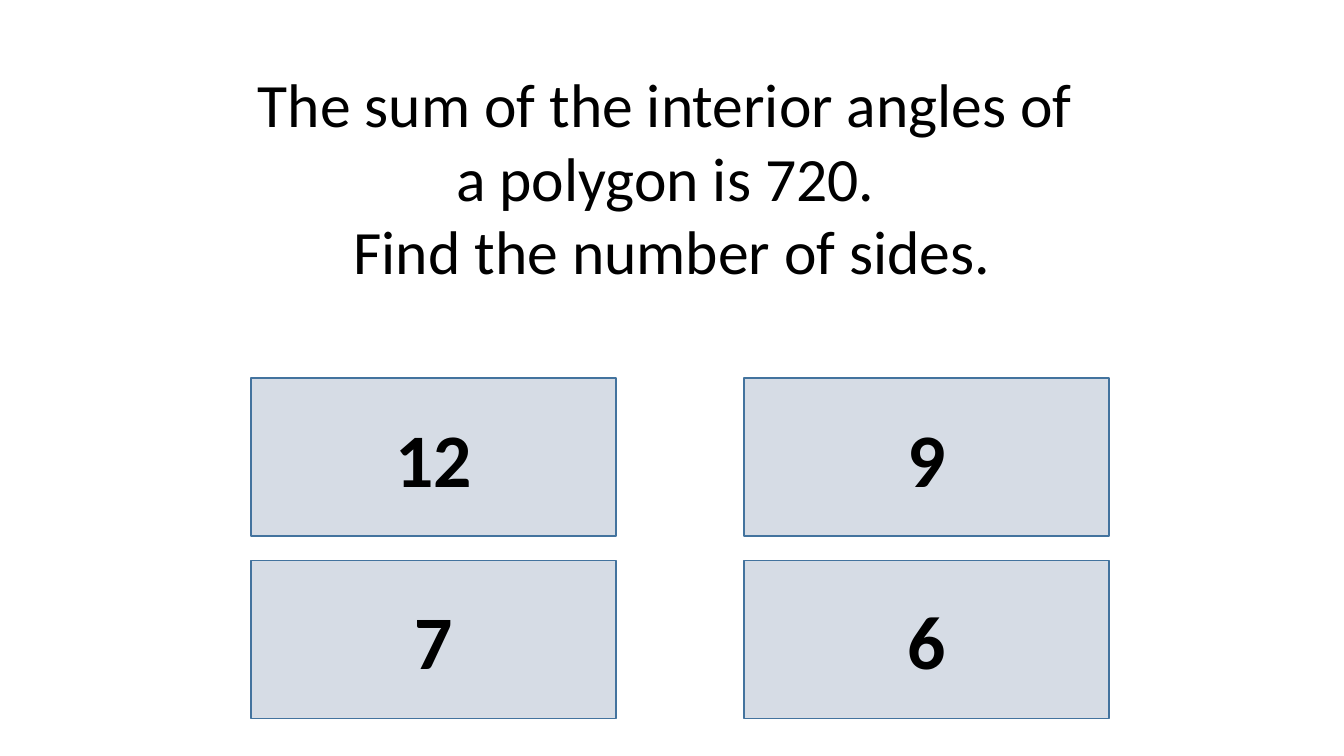
from pptx import Presentation
from pptx.dml.color import RGBColor
from pptx.enum.shapes import MSO_SHAPE
from pptx.enum.text import MSO_ANCHOR, MSO_AUTO_SIZE, PP_ALIGN
from pptx.util import Inches, Pt

COLORS = {"text": "000000", "answer": "D6DCE5", "border": "43739E"}
QUESTION = [
    "The sum of the interior angles of ",
    "a polygon is 720. ",
    "Find the number of sides.",
]
ANSWERS = [["12", "9"], ["7", "6"]]
GRID = {"left": 2.49, "top": 3.75, "column": 4.89, "row": 1.81}
ANSWER_SIZE = (3.62, 1.57)


def color(name):
    return RGBColor.from_string(COLORS[name])


def apply(target, values):
    for name, value in values.items():
        setattr(target, name, value)


def write_lines(shape, lines, anchor, size, bold):
    frame = shape.text_frame
    apply(frame, {
        "word_wrap": True,
        "auto_size": MSO_AUTO_SIZE.NONE,
        "vertical_anchor": anchor,
    })
    frame.text = "\n".join(lines)
    for paragraph in frame.paragraphs:
        paragraph.alignment = PP_ALIGN.CENTER
        apply(paragraph.font, {"name": "Calibri", "size": Pt(size), "bold": bold})
        paragraph.font.color.rgb = color("text")


def add_question(slide):
    title = slide.shapes.title
    apply(title, {
        "left": Inches(2.18),
        "top": Inches(0.6),
        "width": Inches(8.98),
        "height": Inches(2.32),
    })
    write_lines(title, QUESTION, MSO_ANCHOR.TOP, 44, False)


def add_answer(slide, column, row, answer):
    left = GRID["left"] + column * GRID["column"]
    top = GRID["top"] + row * GRID["row"]
    box = slide.shapes.add_shape(
        MSO_SHAPE.RECTANGLE, *map(Inches, (left, top, *ANSWER_SIZE)))
    box.shadow.inherit = False
    box.fill.solid()
    box.fill.fore_color.rgb = color("answer")
    box.line.color.rgb = color("border")
    box.line.width = Pt(1)
    write_lines(box, [answer], MSO_ANCHOR.MIDDLE, 54, True)


def main():
    presentation = Presentation()
    apply(presentation, {"slide_width": Inches(13.33), "slide_height": Inches(7.5)})
    slide = presentation.slides.add_slide(presentation.slide_layouts[5])
    add_question(slide)
    for row, answers in enumerate(ANSWERS):
        for column, answer in enumerate(answers):
            add_answer(slide, column, row, answer)
    presentation.save("out.pptx")


if __name__ == "__main__":
    main()
